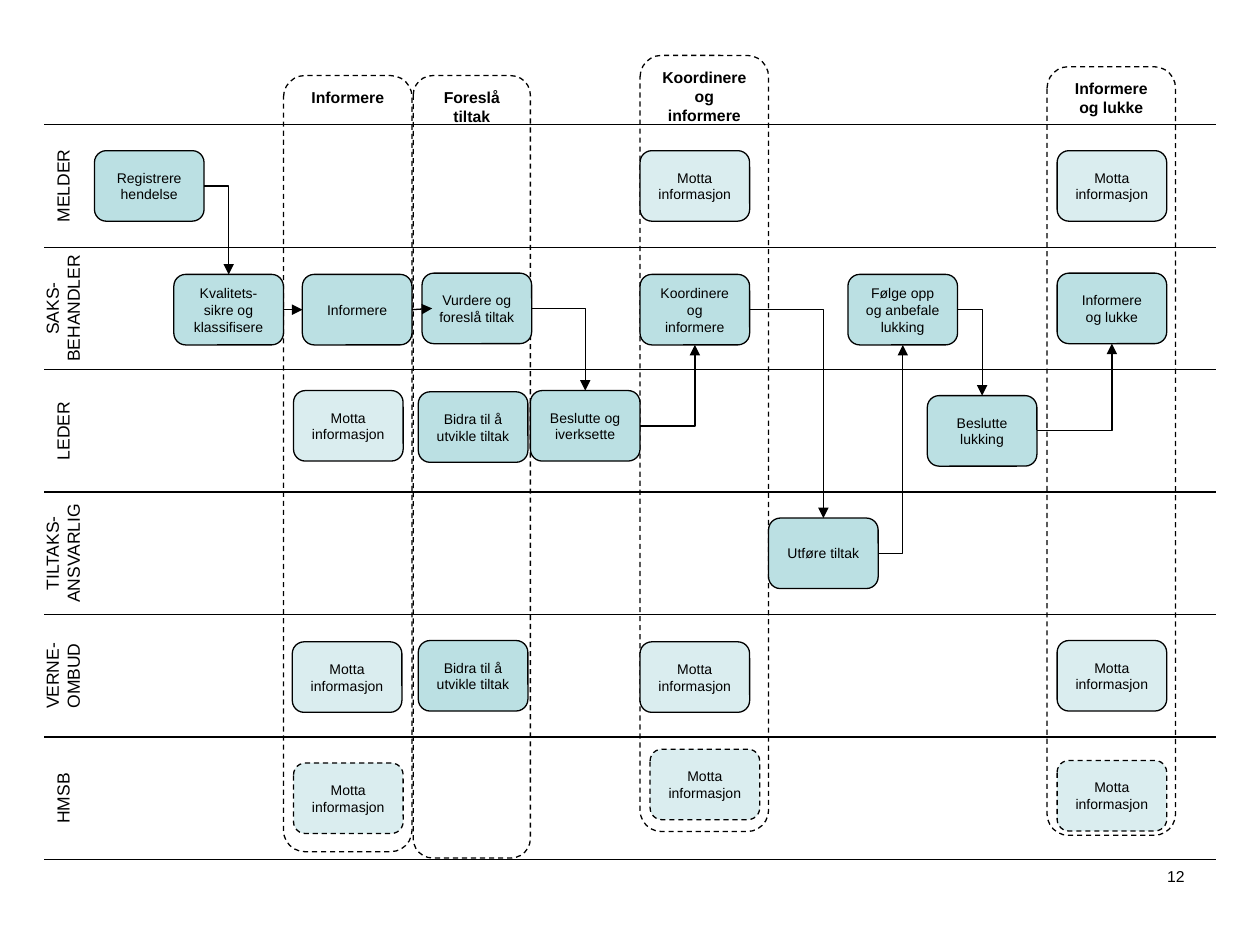
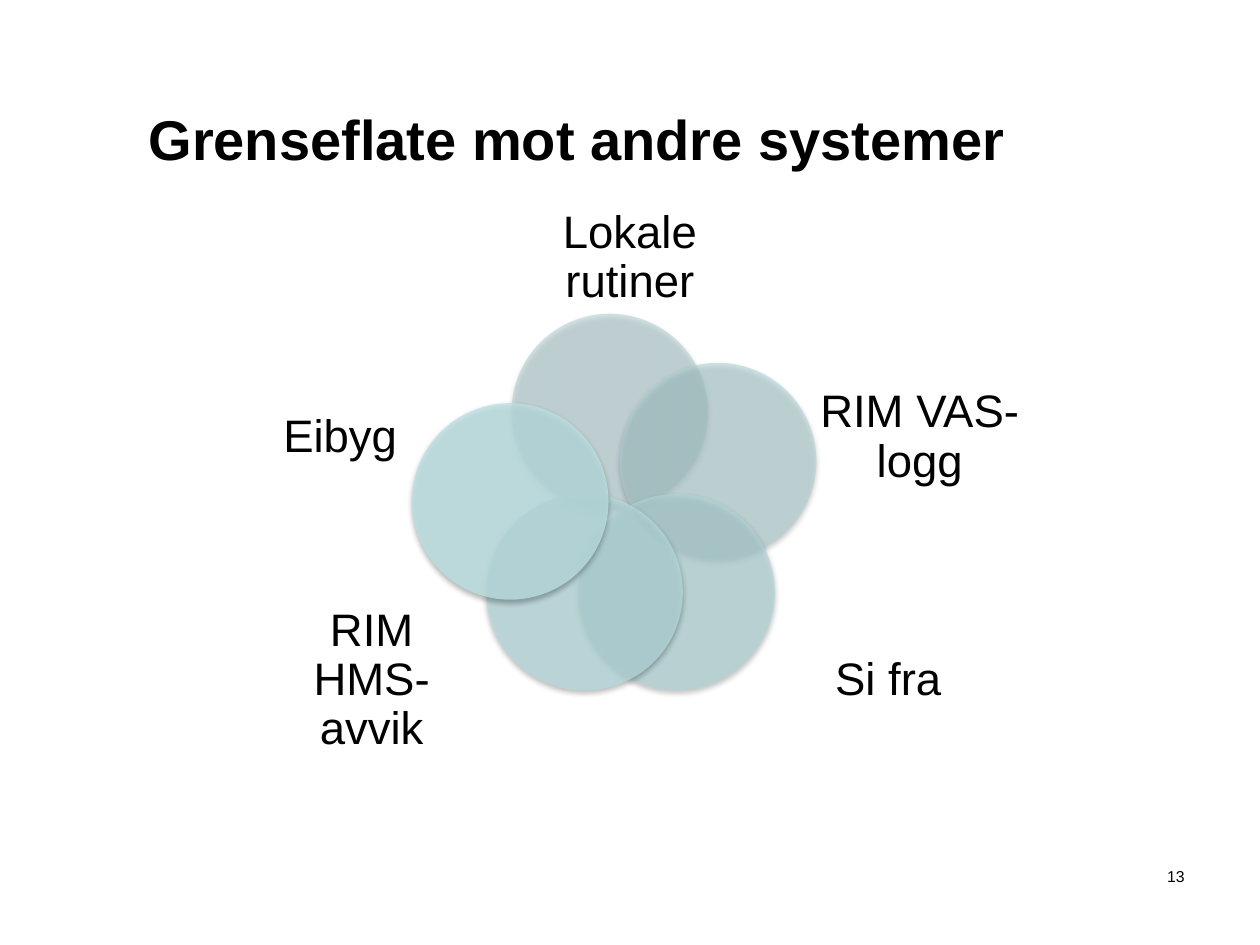
from dataclasses import dataclass

from pptx import Presentation
from pptx.dml.color import RGBColor
from pptx.enum.dml import MSO_LINE
from pptx.enum.shapes import MSO_CONNECTOR, MSO_SHAPE
from pptx.enum.text import MSO_ANCHOR, PP_ALIGN
from pptx.oxml.ns import qn
from pptx.util import Inches, Pt
from lxml.etree import SubElement


@dataclass(frozen=True)
class Theme:
    font: str = "Arial"
    ink: str = "000000"
    step: str = "BBE0E3"
    notice: str = "DAEDEF"
    title_size: int = 32
    petal_size: int = 26
    lane_size: int = 10
    small_size: int = 9
    node_size: int = 8
    line_width: float = 0.75


THEME = Theme()

# Grid of 100 columns and 75 rows; all lengths below are counted in its cells.
SLIDE_W, SLIDE_H = Inches(10), Inches(7.5)
CELL = SLIDE_W // 100
LANES_TOP, LANE_H = 9.9, 9.72
LANES_LEFT, LANES_RIGHT = 3.5, 96.5
NODE_W, NODE_H = 8.7, 5.6
PETAL = 15.6
TOP, LEFT, BOTTOM, RIGHT = range(4)  # connection sites of a node

MELDER, SAKSBEHANDLER, LEDER, TILTAKSANSVARLIG, VERNEOMBUD, HMSB = range(6)
LANES = [("MELDER", 7.9), ("SAKS-\nBEHANDLER", 10.6), ("LEDER", 6.7),
         ("TILTAKS-\nANSVARLIG", 10), ("VERNE-\nOMBUD", 7.3), ("HMSB", 6.1)]

# label, left, top, width, height
PHASES = [
    ("Informere", 22.5, 6, 10.2, 61.6),
    ("Foreslå tiltak", 32.8, 6, 9.3, 62.1),
    ("Koordinere og informere", 50.8, 4.4, 10.2, 61.6),
    ("Informere og lukke", 83.1, 5.3, 10.2, 61),
]

# label, left, lane, offset from the middle of the lane
STEPS = [
    ("Registrere hendelse", 7.5, MELDER, 0),
    ("Kvalitets-sikre og klassifisere", 13.8, SAKSBEHANDLER, 0.1),
    ("Informere", 24, SAKSBEHANDLER, 0.1),
    ("Vurdere og foreslå tiltak", 33.5, SAKSBEHANDLER, 0),
    ("Beslutte og iverksette", 42.1, LEDER, -0.4),
    ("Koordinere og informere", 50.8, SAKSBEHANDLER, 0.1),
    ("Utføre tiltak", 61, TILTAKSANSVARLIG, 0),
    ("Følge opp og anbefale lukking", 67.3, SAKSBEHANDLER, 0.1),
    ("Beslutte lukking", 73.6, LEDER, 0),
    ("Informere og lukke", 83.9, SAKSBEHANDLER, 0),
]
SUPPORT = [(33.2, LEDER, -0.3), (33.2, VERNEOMBUD, 0)]
NOTICES = [
    (50.8, MELDER, 0), (83.9, MELDER, 0), (23.3, LEDER, -0.4),
    (23.2, VERNEOMBUD, 0.1), (50.8, VERNEOMBUD, 0.1), (83.9, VERNEOMBUD, 0),
]
OPTIONAL_NOTICES = [(23.3, HMSB, 0), (51.6, HMSB, -1.1), (83.9, HMSB, -0.2)]

# Side of the next step where each arrow arrives, in the order of STEPS.
ARRIVALS = [TOP, LEFT, LEFT, TOP, BOTTOM, TOP, BOTTOM, TOP, BOTTOM]

# circle left, top, colour, opacity; label, left, top, width, height
SYSTEMS = [
    (40.6, 24.9, "AACBCE", 50, "Lokale rutiner", 41, 15.3, 18, 10.4),
    (49.2, 28.8, "AED1D4", 57, "RIM VAS-logg", 64.9, 29.1, 16.2, 11.3),
    (45.9, 39.2, "B2D6D9", 65, "Si fra", 62.4, 48.4, 16.2, 11.3),
    (38.6, 39.2, "B7DCDF", 72, "RIM HMS-avvik", 21.4, 48.4, 16.2, 11.3),
    (32.7, 32, "BCE0E3", 80, "Eibyg", 18.9, 29.1, 16.2, 11.3),
]


def cells(*counts):
    return [round(n * CELL) for n in counts]


def lane_middle(lane):
    return LANES_TOP + LANE_H * (lane + 0.5)


def put_text(sp, text, size, bold=False, align=PP_ALIGN.CENTER,
             anchor=MSO_ANCHOR.MIDDLE, wrap=True, inset=None, spacing=None):
    """Fill a shape with text, one paragraph a line."""
    tf = sp.text_frame
    tf.word_wrap = wrap
    tf.vertical_anchor = anchor
    if inset is not None:
        tf.margin_left = tf.margin_top = tf.margin_right = tf.margin_bottom = inset
    for i, line in enumerate(text.split("\n")):
        p = tf.paragraphs[0] if i == 0 else tf.add_paragraph()
        p.alignment = align
        if spacing:
            p.line_spacing = spacing
        r = p.add_run()
        r.text = line
        r.font.name = THEME.font
        r.font.size = Pt(size)
        r.font.bold = bold
        r.font.color.rgb = RGBColor.from_string(THEME.ink)


def text_box(s, text, box, size, **fmt):
    sp = s.shapes.add_textbox(*cells(*box))
    put_text(sp, text, size, **fmt)
    return sp


def ink_line(line, dashed=False):
    line.color.rgb = RGBColor.from_string(THEME.ink)
    line.width = Pt(THEME.line_width)
    if dashed:
        line.dash_style = MSO_LINE.DASH


def rounded_box(s, box, fill=None, dashed=False):
    sp = s.shapes.add_shape(MSO_SHAPE.ROUNDED_RECTANGLE, *cells(*box))
    sp.shadow.inherit = False
    if fill:
        sp.fill.solid()
        sp.fill.fore_color.rgb = RGBColor.from_string(fill)
    else:
        sp.fill.background()
    ink_line(sp.line, dashed)
    return sp


def phase(s, label, *box):
    sp = rounded_box(s, box, dashed=True)
    put_text(sp, label, THEME.small_size, bold=True, anchor=MSO_ANCHOR.TOP)


def node(s, label, left, lane, offset, fill=THEME.step, dashed=False):
    top = lane_middle(lane) + offset - NODE_H / 2
    sp = rounded_box(s, (left, top, NODE_W, NODE_H), fill, dashed)
    put_text(sp, label, THEME.node_size)
    return sp


def connector(s, kind, *ends):
    c = s.shapes.add_connector(kind, *cells(*ends))
    ink_line(c.line)
    SubElement(c._element.spPr, qn("a:effectLst"))
    return c


def arrow(s, start, end, side, reach=0):
    """Join the right side of start to a side of end, or reach past it."""
    straight = side == LEFT
    kind = MSO_CONNECTOR.STRAIGHT if straight else MSO_CONNECTOR.ELBOW
    c = connector(s, kind, 0, 0, 0, 0)
    c.begin_connect(start, RIGHT)
    if reach:
        c.end_x = end.left + cells(reach)[0]
        c.end_y = end.top + end.height // 2
    else:
        c.end_connect(end, side)
    if not straight:
        c._element.spPr.find(qn("a:prstGeom")).set("prst", "bentConnector2")
    SubElement(c.line._get_or_add_ln(), qn("a:tailEnd"), type="triangle")


def lane_label(s, text, lane, width):
    height = 1 + 1.7 * len(text.split("\n"))
    box = (5 - width / 2, lane_middle(lane) - height / 2, width, height)
    text_box(s, text, box, THEME.lane_size, wrap=False,
             anchor=MSO_ANCHOR.TOP).rotation = 270


def petal(s, left, top, colour, opacity):
    """Translucent circle with a soft shadow below it."""
    sp = s.shapes.add_shape(MSO_SHAPE.OVAL, *cells(left, top, PETAL, PETAL))
    sp.fill.solid()
    sp.fill.fore_color.rgb = RGBColor.from_string(colour)
    sp.line.fill.background()
    sp.shadow.inherit = False
    spPr = sp._element.spPr
    rgb = spPr.find(qn("a:solidFill")).find(qn("a:srgbClr"))
    SubElement(rgb, qn("a:alpha"), val=str(opacity * 1000))
    shadow = SubElement(spPr.find(qn("a:effectLst")), qn("a:outerShdw"),
                        blurRad=str(Pt(3.1)), dist=str(Pt(1.8)),
                        dir="5400000", rotWithShape="0")
    shade = SubElement(shadow, qn("a:srgbClr"), val=THEME.ink)
    SubElement(shade, qn("a:alpha"), val="35000")


def new_slide(prs, number):
    s = prs.slides.add_slide(prs.slide_layouts[6])
    text_box(s, str(number), (87.5, 68.3, 7.5, 5), THEME.small_size,
             align=PP_ALIGN.RIGHT, anchor=MSO_ANCHOR.TOP)
    return s


def process_slide(prs):
    s = new_slide(prs, 12)
    for i in range(len(LANES) + 1):
        y = LANES_TOP + i * LANE_H
        connector(s, MSO_CONNECTOR.STRAIGHT, LANES_LEFT, y, LANES_RIGHT, y)
    for lane, (text, width) in enumerate(LANES):
        lane_label(s, text, lane, width)
    for spec_row in PHASES:
        phase(s, *spec_row)
    for place in NOTICES:
        node(s, "Motta informasjon", *place, fill=THEME.notice)
    for place in OPTIONAL_NOTICES:
        node(s, "Motta\ninformasjon", *place, fill=THEME.notice, dashed=True)
    for place in SUPPORT:
        node(s, "Bidra til å utvikle tiltak", *place)
    steps = [node(s, *step) for step in STEPS]
    for i, (start, end, side) in enumerate(zip(steps, steps[1:], ARRIVALS)):
        arrow(s, start, end, side, reach=0.8 if i == 2 else 0)


def systems_slide(prs):
    s = new_slide(prs, 13)
    text_box(s, "Grenseflate mot andre systemer", (10.8, 6.7, 84.2, 8.6),
             THEME.title_size, bold=True, align=PP_ALIGN.LEFT)
    for left, top, colour, opacity, label, *box in SYSTEMS:
        petal(s, left, top, colour, opacity)
        text_box(s, label, box, THEME.petal_size, inset=0, spacing=0.9)


def main():
    prs = Presentation()
    prs.slide_width, prs.slide_height = SLIDE_W, SLIDE_H
    process_slide(prs)
    systems_slide(prs)
    prs.save("out.pptx")


if __name__ == "__main__":
    main()
